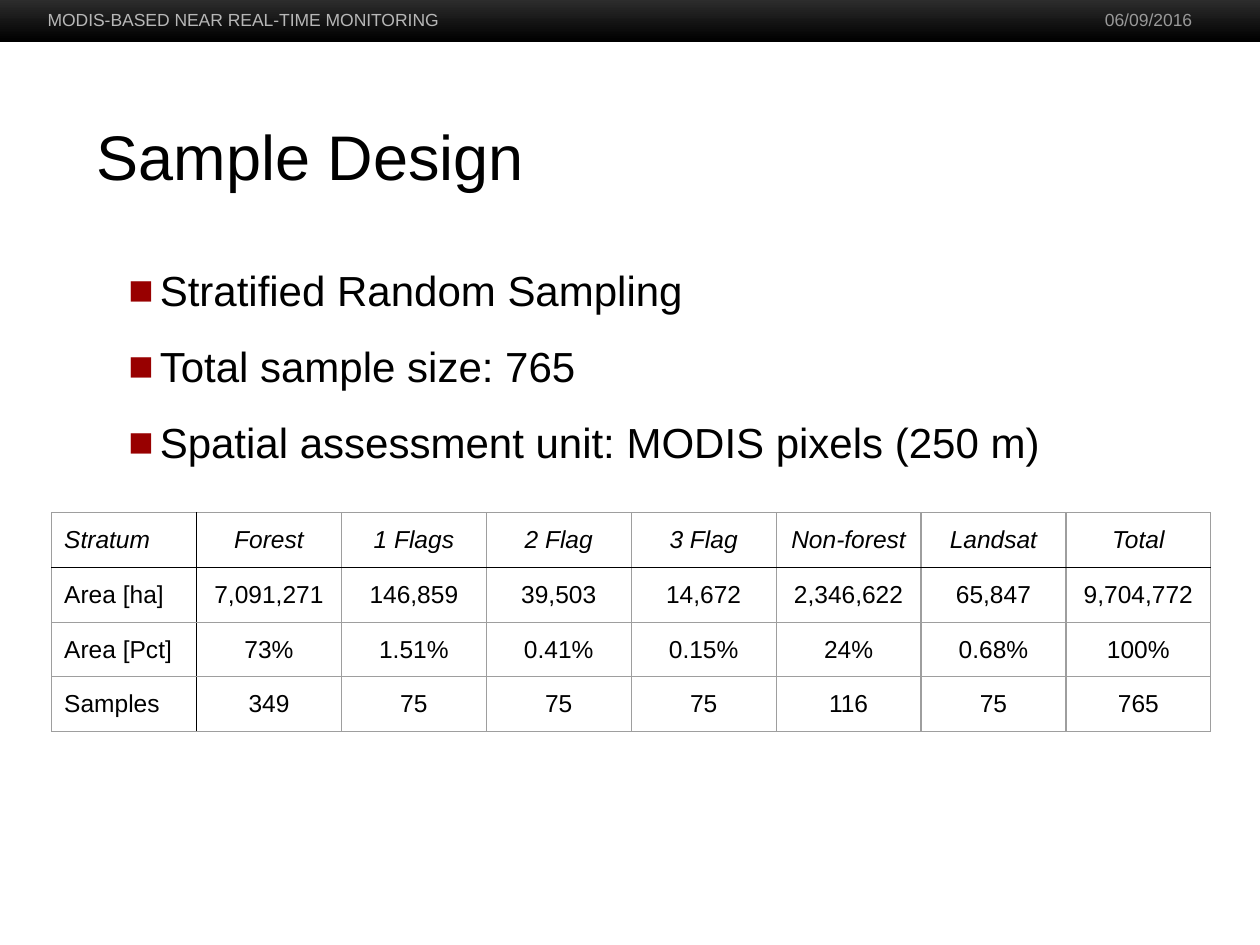
from lxml.etree import SubElement
from pptx import Presentation
from pptx.dml.color import RGBColor
from pptx.enum.shapes import MSO_SHAPE
from pptx.enum.text import MSO_ANCHOR, PP_ALIGN
from pptx.oxml.ns import qn
from pptx.util import Inches, Pt

BLACK, GREY, RED = "000000", "9E9E9E", "980000"


def color(value):
    return RGBColor.from_string(value)


class Deck:
    font = "Arial"
    inset = Inches(0.1)

    def __init__(self, slide):
        self.s = slide

    def run(self, p, text, size, fill=BLACK, italic=False):
        r = p.add_run()
        r.text = text
        r.font.name, r.font.size, r.font.italic = self.font, Pt(size), italic
        r.font.color.rgb = color(fill)

    def frame(self, x, y, w, h, anchor=MSO_ANCHOR.TOP):
        sp = self.s.shapes.add_textbox(Inches(x), Inches(y), Inches(w), Inches(h))
        tf = sp.text_frame
        tf.word_wrap = True
        tf.vertical_anchor = anchor
        tf.margin_left = tf.margin_right = self.inset
        tf.margin_top = tf.margin_bottom = self.inset
        return tf

    def text(self, x, y, w, h, text, size, fill=BLACK,
             align=PP_ALIGN.LEFT, anchor=MSO_ANCHOR.TOP):
        p = self.frame(x, y, w, h, anchor).paragraphs[0]
        p.alignment = align
        self.run(p, text, size, fill)

    def band(self, x, y, w, h, top, bottom):
        sp = self.s.shapes.add_shape(
            MSO_SHAPE.RECTANGLE, Inches(x), Inches(y), Inches(w), Inches(h))
        sp.shadow.inherit = False
        sp.line.fill.background()
        sp.fill.gradient()
        sp.fill.gradient_angle = 270
        for stop, value in zip(sp.fill.gradient_stops, (top, bottom)):
            stop.color.rgb = color(value)

    def bullets(self, x, y, w, h, items, size):
        tf = self.frame(x, y, w, h)
        for i, item in enumerate(items):
            p = tf.paragraphs[0] if i == 0 else tf.add_paragraph()
            pPr = p._p.get_or_add_pPr()
            pPr.set("marL", str(Inches(0.5)))
            pPr.set("indent", str(Inches(-0.25)))
            clr = SubElement(pPr, qn("a:buClr"))
            SubElement(clr, qn("a:srgbClr"), val=RED)
            SubElement(pPr, qn("a:buFont"), typeface=self.font)
            SubElement(pPr, qn("a:buChar"), char="■")
            p.space_after = Pt(10)
            if i == len(items) - 1:
                p.line_spacing = 1.15
            elif i > 0:
                p.space_before = Pt(4.8)
            self.run(p, item, size)

    def border(self, cell, side, value):
        ln = SubElement(cell._tc.get_or_add_tcPr(), qn("a:ln" + side), w=str(Pt(0.75)))
        fill = SubElement(ln, qn("a:solidFill"))
        SubElement(fill, qn("a:srgbClr"), val=value)

    def table(self, x, y, col_w, row_h, rows, size):
        n_rows, n_cols = len(rows), len(rows[0])
        tbl = self.s.shapes.add_table(
            n_rows, n_cols, Inches(x), Inches(y),
            Inches(col_w * n_cols), Inches(row_h * n_rows)).table
        tbl.first_row = tbl.horz_banding = False
        for col in tbl.columns:
            col.width = Inches(col_w)
        for i, row in enumerate(rows):
            tbl.rows[i].height = Inches(row_h)
            for j, value in enumerate(row):
                cell = tbl.cell(i, j)
                cell.vertical_anchor = MSO_ANCHOR.MIDDLE
                cell.margin_left = cell.margin_right = self.inset
                cell.margin_top = cell.margin_bottom = self.inset
                # Black rules set off the header row and the label column
                dark = {"L": j == 1, "R": j == 0, "T": i == 1, "B": i == 0}
                for side, is_dark in dark.items():
                    self.border(cell, side, BLACK if is_dark else GREY)
                cell.fill.background()
                p = cell.text_frame.paragraphs[0]
                p.alignment = PP_ALIGN.CENTER if j else PP_ALIGN.LEFT
                self.run(p, value, size, italic=i == 0)


def main():
    prs = Presentation()
    prs.slide_width, prs.slide_height = Inches(10), Inches(7.5)
    deck = Deck(prs.slides.add_slide(prs.slide_layouts[6]))

    # Header band
    deck.band(0, -0.05, 10, 0.38, "333333", BLACK)
    deck.text(0.28, 0, 4.8, 0.31, "MODIS-BASED NEAR REAL-TIME MONITORING", 10,
              "B7B7B7", anchor=MSO_ANCHOR.MIDDLE)
    deck.text(5.2, 0, 4.36, 0.31, "06/09/2016", 10, "999999",
              PP_ALIGN.RIGHT, MSO_ANCHOR.MIDDLE)

    # Title and bullets
    deck.text(0.67, 0.83, 8.67, 0.75, "Sample Design", 36)
    deck.bullets(0.67, 2, 8.67, 4.25, [
        "Stratified Random Sampling",
        "Total sample size: 765",
        "Spatial assessment unit: MODIS pixels (250 m)",
    ], 24)

    # Strata table
    deck.table(0.41, 4.07, 1.15, 0.42, [
        ["Stratum", "Forest", "1 Flags", "2 Flag", "3 Flag",
         "Non-forest", "Landsat", "Total"],
        ["Area [ha]", "7,091,271", "146,859", "39,503", "14,672",
         "2,346,622", "65,847", "9,704,772"],
        ["Area [Pct]", "73%", "1.51%", "0.41%", "0.15%", "24%", "0.68%", "100%"],
        ["Samples", "349", "75", "75", "75", "116", "75", "765"],
    ], 14)

    prs.save("out.pptx")


if __name__ == "__main__":
    main()
